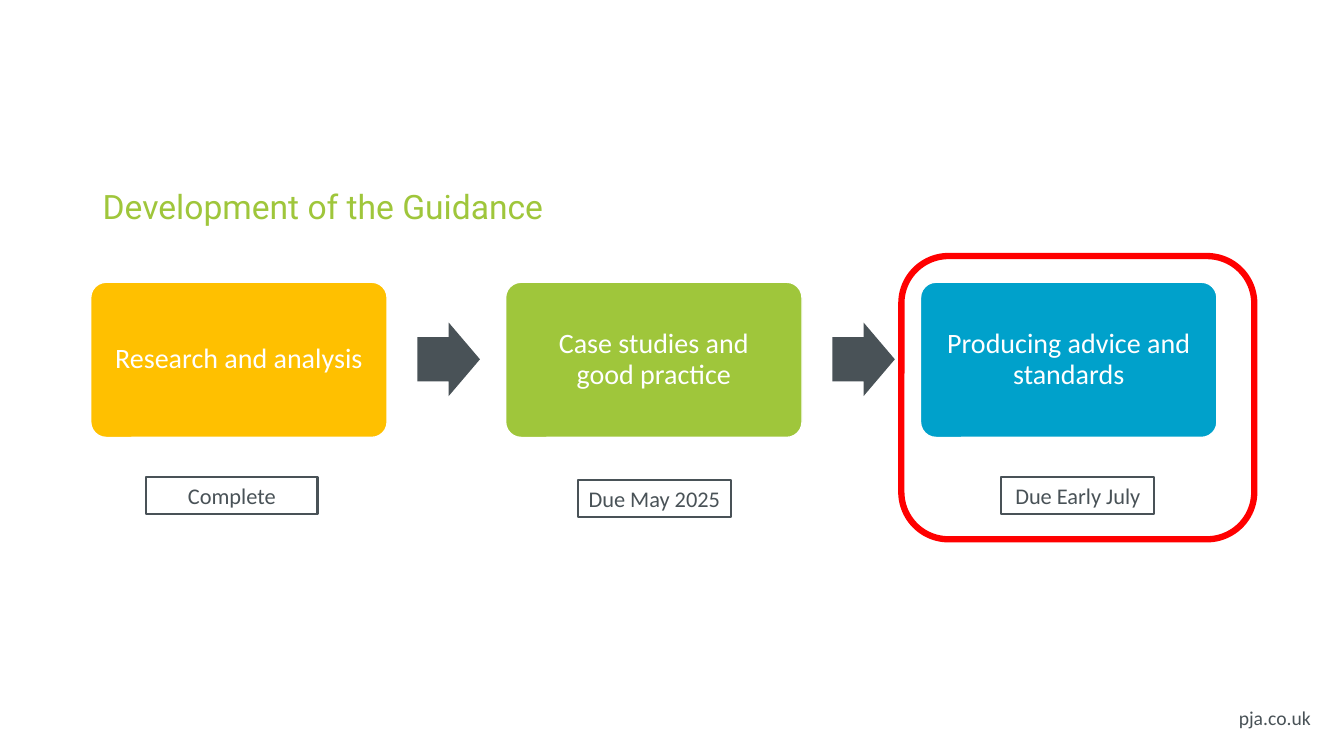
from dataclasses import dataclass

from pptx import Presentation
from pptx.dml.color import RGBColor
from pptx.enum.shapes import MSO_SHAPE
from pptx.enum.text import MSO_ANCHOR, PP_ALIGN
from pptx.util import Inches, Pt


@dataclass(frozen=True)
class Theme:
    green: str = "9FC63B"
    amber: str = "FFC000"
    blue: str = "00A1CB"
    slate: str = "495257"
    white: str = "FFFFFF"
    red: str = "FF0000"
    heading: str = "Roboto"
    body: str = "Calibri"
    title_size: int = 24
    stage_size: int = 20
    label_size: int = 16
    footer_size: int = 14


theme = Theme()
prs = Presentation()
prs.slide_width, prs.slide_height = Inches(13.33), Inches(7.5)
s = prs.slides.add_slide(prs.slide_layouts[6])


def add_box(kind, box, fill=None, line=None, width=1, adj=()):
    sp = s.shapes.add_shape(kind, *[Inches(v) for v in box])
    sp.shadow.inherit = False
    for i, value in enumerate(adj):
        sp.adjustments[i] = value
    if fill:
        sp.fill.solid()
        sp.fill.fore_color.rgb = RGBColor.from_string(fill)
    else:
        sp.fill.background()
    if line:
        sp.line.color.rgb = RGBColor.from_string(line)
        sp.line.width = Pt(width)
    else:
        sp.line.fill.background()
    return sp


def write(sp, text, size, color, align=PP_ALIGN.CENTER, font=theme.body,
          spacing=1.0, margin=0.1, anchor=MSO_ANCHOR.MIDDLE):
    tf = sp.text_frame
    frame = {"word_wrap": True, "vertical_anchor": anchor,
             "margin_left": Inches(margin), "margin_right": Inches(margin)}
    for name, value in frame.items():
        setattr(tf, name, value)
    p = tf.paragraphs[0]
    p.text = text
    p.alignment, p.line_spacing = align, spacing
    for r in p.runs:
        for name, value in {"size": Pt(size), "name": font}.items():
            setattr(r.font, name, value)
        r.font.color.rgb = RGBColor.from_string(color)


# Footer and title
footer = s.shapes.add_textbox(Inches(12.08), Inches(6.95), Inches(1.02), Inches(0.4))
write(footer, "pja.co.uk", theme.footer_size, theme.slate, PP_ALIGN.RIGHT,
      anchor=MSO_ANCHOR.TOP)
title = s.shapes.add_textbox(Inches(0.92), Inches(1.72), Inches(11.5), Inches(0.7))
write(title, "Development of the Guidance", theme.title_size, theme.green,
      PP_ALIGN.LEFT, theme.heading, 0.9)

# Stages, arrows between them, and due-date labels
stages = [
    ("Research and analysis", theme.amber, "Complete", (1.45, 4.73, 1.7, 0.37)),
    ("Case studies and\vgood practice", theme.green, "Due May 2025", (5.73, 4.76, 1.52, 0.37)),
    ("Producing advice and standards", theme.blue, "Due Early July", (9.93, 4.73, 1.52, 0.37)),
]
left, pitch = 0.9, 4.115
for i, (stage, color, due, due_box) in enumerate(stages):
    x = left + i * pitch
    sp = add_box(MSO_SHAPE.ROUNDED_RECTANGLE, (x, 2.8, 2.94, 1.54), color,
                 theme.white, adj=(0.1,))
    write(sp, stage, theme.stage_size, theme.white, spacing=0.9)
    if i < len(stages) - 1:
        add_box(MSO_SHAPE.RIGHT_ARROW, (x + 3.24, 3.2, 0.62, 0.73), theme.slate,
                adj=(0.6, 0.5))
    label = add_box(MSO_SHAPE.RECTANGLE, due_box, line=theme.slate, width=1.5)
    write(label, due, theme.label_size, theme.slate, margin=0.05)

# Highlight around the current stage
add_box(MSO_SHAPE.ROUNDED_RECTANGLE, (8.94, 2.54, 3.5, 2.81), line=theme.red, width=4.5)

prs.save("out.pptx")
